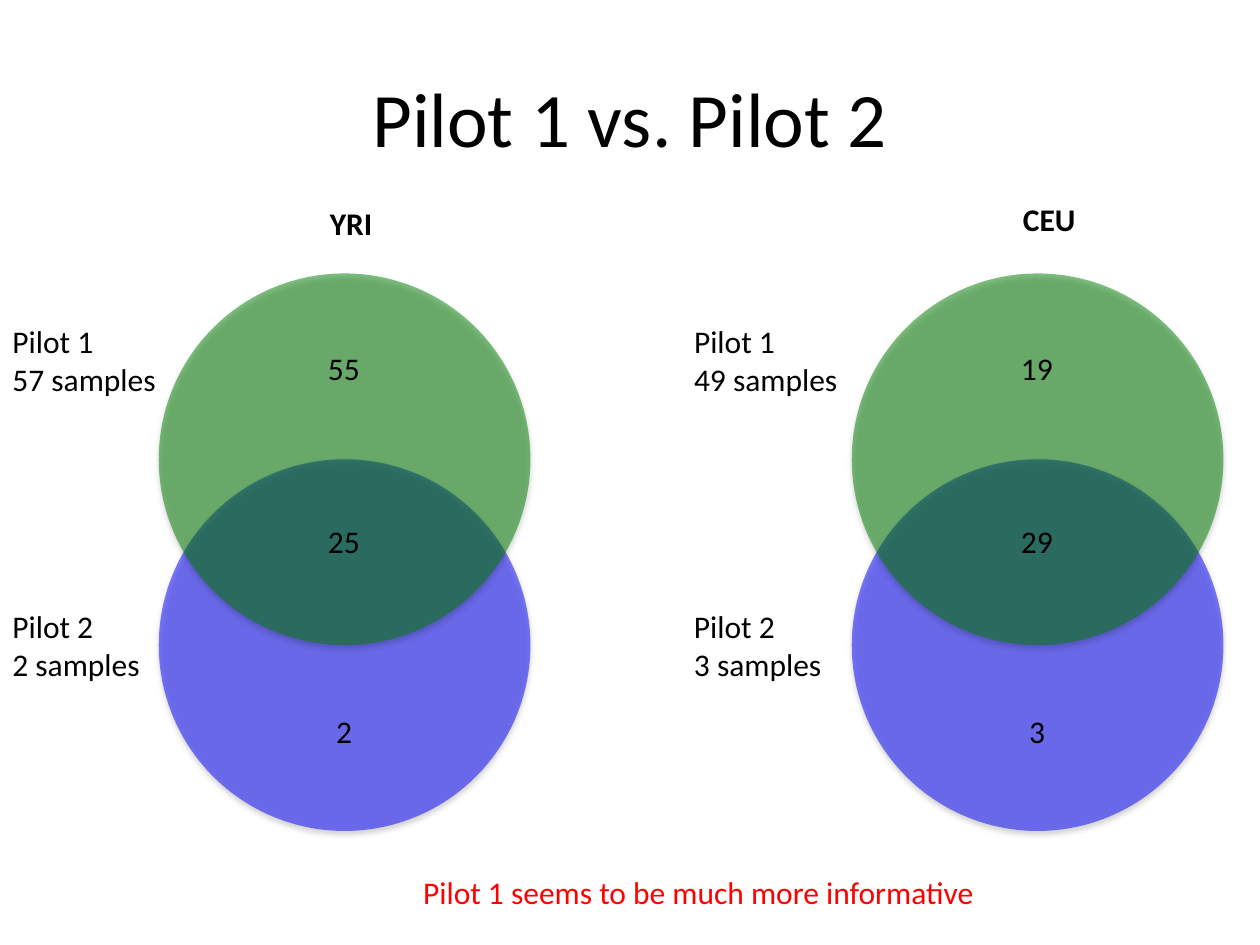
from dataclasses import dataclass

from lxml import etree
from pptx import Presentation
from pptx.dml.color import RGBColor
from pptx.enum.shapes import MSO_SHAPE
from pptx.enum.text import MSO_ANCHOR, MSO_AUTO_SIZE, PP_ALIGN
from pptx.oxml.ns import qn
from pptx.slide import Slide
from pptx.util import Inches, Pt

OVAL = MSO_SHAPE.OVAL
MIDDLE = MSO_ANCHOR.MIDDLE
LEFT, CENTER = PP_ALIGN.LEFT, PP_ALIGN.CENTER
GROW, FIXED = MSO_AUTO_SIZE.SHAPE_TO_FIT_TEXT, MSO_AUTO_SIZE.NONE

BLACK = RGBColor(0x00, 0x00, 0x00)
RED = RGBColor(0xFF, 0x00, 0x00)
GREEN = RGBColor(0x00, 0x80, 0x00)
BLUE = RGBColor(0x00, 0x00, 0xFF)

# The slide is a grid of 100 columns by 75 rows.
WIDTH, HEIGHT = Inches(10), Inches(7.5)
COL, ROW = WIDTH / 100, HEIGHT / 75

SIZE = 29.5  # circle diameter
TOP = 21.7   # top of the upper circle
LINE = 4     # height of one text line


@dataclass
class Box:
    x: float
    y: float
    w: float
    h: float

    def place(self) -> tuple[int, int, int, int]:
        return (round(self.x * COL), round(self.y * ROW),
                round(self.w * COL), round(self.h * ROW))


@dataclass
class Venn:
    name: str
    x: float         # left edge of the circles
    side: float      # left edge of the sample labels
    head: Box
    counts: tuple[str, str, str]   # upper only, shared, lower only
    samples: tuple[str, str]


VENNS = [
    Venn("YRI", 12.6, 0, Box(25.2, 15.7, 5.4, LINE),
         ("55", "25", "2"), ("57 samples", "2 samples")),
    Venn("CEU", 67.6, 54.1, Box(80.2, 15.4, 6.2, LINE),
         ("19", "29", "3"), ("49 samples", "3 samples")),
]


def add_text(slide: Slide, box: Box, lines: list[str], size: float = 18,
             color: RGBColor = BLACK, bold: bool = False,
             align: PP_ALIGN = LEFT, wrap: bool = False) -> None:
    frame = slide.shapes.add_textbox(*box.place()).text_frame
    frame.text = "\n".join(lines)
    frame.word_wrap = wrap
    frame.auto_size = FIXED if wrap else GROW
    if wrap:
        frame.vertical_anchor = MIDDLE
    form = {"name": "Calibri", "size": Pt(size), "bold": bold}
    for para in frame.paragraphs:
        para.alignment = align
        for key, value in form.items():
            setattr(para.font, key, value)
        para.font.color.rgb = color


def set_alpha(color: etree._Element, share: int) -> None:
    etree.SubElement(color, qn("a:alpha"), val=str(share * 1000))


def add_shade(props: etree._Element) -> None:
    """Put a soft shadow straight below the shape."""
    effects = props.find(qn("a:effectLst"))
    shade = etree.SubElement(
        effects, qn("a:outerShdw"), blurRad=str(Pt(3.1)), dist=str(Pt(1.8)),
        dir="5400000", rotWithShape="0")
    color = etree.SubElement(shade, qn("a:srgbClr"), val=str(BLACK))
    set_alpha(color, 35)


def add_disc(slide: Slide, x: float, y: float, color: RGBColor) -> None:
    disc = slide.shapes.add_shape(OVAL, *Box(x, y, SIZE, SIZE).place())
    disc.fill.solid()
    disc.fill.fore_color.rgb = color
    disc.line.fill.background()
    disc.shadow.inherit = False
    props = disc.fill._xPr
    set_alpha(props.find(qn("a:solidFill"))[0], 50)
    add_shade(props)


def add_venn(slide: Slide, venn: Venn) -> None:
    add_disc(slide, venn.x, TOP + SIZE / 2, BLUE)
    add_disc(slide, venn.x, TOP, GREEN)
    mid = venn.x + SIZE / 2
    for count, y in zip(venn.counts, (27.2, 40.9, 56)):
        wide = 4.6 if len(count) == 2 else 3.3
        add_text(slide, Box(mid - wide / 2, y, wide, LINE), [count])
    add_text(slide, venn.head, [venn.name], bold=True)
    rows = zip(venn.samples, (25.1, 47.7), (13.5, 12.3))
    for num, (sample, y, wide) in enumerate(rows, 1):
        add_text(slide, Box(venn.side, y, wide, 7.1), [f"Pilot {num}", sample])


def main() -> None:
    deck = Presentation()
    deck.slide_width, deck.slide_height = WIDTH, HEIGHT
    slide = deck.slides.add_slide(deck.slide_layouts[6])
    add_text(slide, Box(5, 3, 90, 12.5), ["Pilot 1 vs. Pilot 2"],
             size=44, align=CENTER, wrap=True)
    for venn in VENNS:
        add_venn(slide, venn)
    add_text(slide, Box(32.6, 68.8, 46.2, LINE),
             ["Pilot 1 seems to be much more informative"], color=RED)
    deck.save("out.pptx")


if __name__ == "__main__":
    main()
